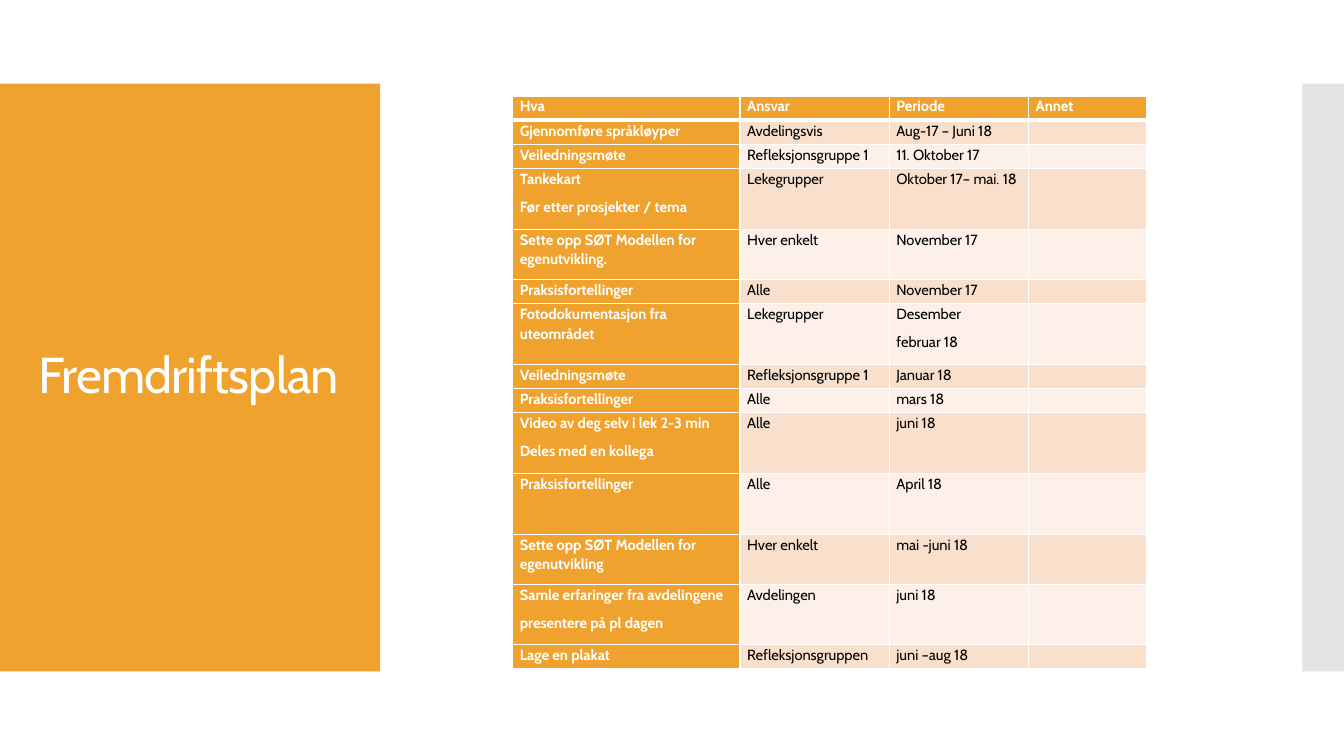
import pptx
import pptx.dml.color
import pptx.enum.shapes
import pptx.enum.text
import pptx.oxml.ns
import pptx.util
from lxml import etree

Cm = pptx.util.Cm
Pt = pptx.util.Pt
RGBColor = pptx.dml.color.RGBColor
qn = pptx.oxml.ns.qn

ORANGE = RGBColor(0xF0, 0xA2, 0x2E)
GREY = RGBColor(0xC8, 0xC8, 0xC8)
PEACH = RGBColor(0xF9, 0xE0, 0xCD)
CREAM = RGBColor(0xFC, 0xF0, 0xE8)
WHITE = RGBColor(0xFF, 0xFF, 0xFF)
BLACK = RGBColor(0, 0, 0)
FONT = "Cabin"
CELL_SIZE = Pt(10.5)

# Row heights: one line, one wrapped entry, two paragraphs
SINGLE, WRAPPED, DOUBLE = Cm(0.61), Cm(1.26), Cm(1.53)
COLUMN_WIDTHS = [Cm(5.73), Cm(3.76), Cm(3.51), Cm(2.98)]
PLAN = [
    (SINGLE, "Hva", "Ansvar", "Periode", "Annet"),
    (SINGLE, "Gjennomføre språkløyper", "Avdelingsvis", "Aug-17 – Juni 18", ""),
    (SINGLE, "Veiledningsmøte", "Refleksjonsgruppe 1", "11. Oktober 17", ""),
    (DOUBLE, "Tankekart\nFør etter prosjekter / tema", "Lekegrupper", "Oktober 17– mai. 18", ""),
    (WRAPPED, "Sette opp SØT Modellen for egenutvikling.", "Hver enkelt", "November 17", ""),
    (SINGLE, "Praksisfortellinger", "Alle", "November 17", ""),
    (DOUBLE, "Fotodokumentasjon fra uteområdet", "Lekegrupper", "Desember\nfebruar 18", ""),
    (SINGLE, "Veiledningsmøte", "Refleksjonsgruppe 1", "Januar 18", ""),
    (SINGLE, "Praksisfortellinger", "Alle", "mars 18", ""),
    (DOUBLE, "Video av deg selv i lek 2-3 min\nDeles med en kollega", "Alle", "juni 18", ""),
    (DOUBLE, "Praksisfortellinger", "Alle", "April 18", ""),
    (WRAPPED, "Sette opp SØT Modellen for egenutvikling", "Hver enkelt", "mai -juni 18", ""),
    (DOUBLE, "Samle erfaringer fra avdelingene\npresentere på pl dagen", "Avdelingen", "juni 18", ""),
    (SINGLE, "Lage en plakat", "Refleksjonsgruppen", "juni –aug 18", ""),
]


def add_panel(slide, left, top, width, height, color):
    panel = slide.shapes.add_shape(
        pptx.enum.shapes.MSO_SHAPE.RECTANGLE, left, top, width, height)
    panel.shadow.inherit = False
    panel.fill.solid()
    panel.fill.fore_color.rgb = color
    panel.line.fill.background()
    return panel


def format_run(run, size, color, bold=False):
    run.font.name = FONT
    run.font.size = size
    run.font.bold = bold
    run.font.color.rgb = color


def add_title_region(slide, left, top, width, height):
    add_panel(slide, left, top, width, height, ORANGE)
    title = slide.shapes.title
    # Bring the title in front of its panel
    slide.shapes._spTree.append(title._element)
    title.left, title.top = left + Cm(0.71), top + Cm(1.02)
    title.width, title.height = width - Cm(1.4), height - Cm(2.04)
    frame = title.text_frame
    frame.text = "Fremdriftsplan"
    frame.word_wrap = True
    frame.auto_size = pptx.enum.text.MSO_AUTO_SIZE.NONE
    frame.vertical_anchor = pptx.enum.text.MSO_ANCHOR.MIDDLE
    paragraph = frame.paragraphs[0]
    paragraph.alignment = pptx.enum.text.PP_ALIGN.LEFT
    paragraph.line_spacing = 0.9
    run = paragraph.runs[0]
    format_run(run, Pt(36), WHITE)
    run.font._element.set("spc", "-60")


def add_edge_strip(slide, left, top, width, height):
    strip = add_panel(slide, left, top, width, height, GREY)
    color = strip._element.spPr.find(qn("a:solidFill"))[0]
    etree.SubElement(color, qn("a:alpha")).set("val", "50000")


def set_borders(cell, top_width, bottom_width):
    properties = cell._tc.get_or_add_tcPr()
    widths = {"a:lnL": Pt(1), "a:lnR": Pt(1), "a:lnT": top_width, "a:lnB": bottom_width}
    for side, width in widths.items():
        line = etree.SubElement(properties, qn(side), w=str(width))
        fill = etree.SubElement(line, qn("a:solidFill"))
        etree.SubElement(fill, qn("a:srgbClr"), val=str(WHITE))


def format_cell(cell, text, fill_color, text_color, bold):
    cell.margin_left = cell.margin_right = Cm(0.18)
    cell.margin_top = cell.margin_bottom = 0
    cell.fill.solid()
    cell.fill.fore_color.rgb = fill_color
    cell.text_frame.text = text
    for paragraph in cell.text_frame.paragraphs:
        paragraph.line_spacing = 1.1
        paragraph.space_after = Pt(6)
        for run in paragraph.runs:
            format_run(run, CELL_SIZE, text_color, bold)
        if not paragraph.runs:
            # Keep empty cells from stretching their row
            ending = etree.SubElement(paragraph._p, qn("a:endParaRPr"))
            ending.set("sz", str(int(CELL_SIZE.pt * 100)))
            etree.SubElement(ending, qn("a:latin"), typeface=FONT)


def add_plan_table(slide, left, top, width, height):
    table = slide.shapes.add_table(
        len(PLAN), len(COLUMN_WIDTHS), left, top, width, height).table
    table.horz_banding = False
    for column, column_width in zip(table.columns, COLUMN_WIDTHS):
        column.width = column_width
    for row_index, (row_height, *texts) in enumerate(PLAN):
        table.rows[row_index].height = row_height
        band = PEACH if row_index % 2 else CREAM
        for column_index, text in enumerate(texts):
            cell = table.cell(row_index, column_index)
            heading = row_index == 0 or column_index == 0
            # A thick rule separates the header from the body
            set_borders(cell, Pt(3) if row_index == 1 else Pt(1),
                        Pt(3) if row_index == 0 else Pt(1))
            format_cell(cell, text, ORANGE if heading else band,
                        WHITE if heading else BLACK, heading)


def main():
    presentation = pptx.Presentation()
    presentation.slide_width, presentation.slide_height = Cm(33.87), Cm(19.05)
    slide = presentation.slides.add_slide(presentation.slide_layouts[5])
    band_top, band_height = Cm(2.11), Cm(14.81)
    add_title_region(slide, 0, band_top, Cm(9.58), band_height)
    add_edge_strip(slide, Cm(32.82), band_top, Cm(1.05), band_height)
    add_plan_table(slide, Cm(12.92), Cm(2.42), sum(COLUMN_WIDTHS),
                   sum(row[0] for row in PLAN))
    presentation.save("out.pptx")


if __name__ == "__main__":
    main()
